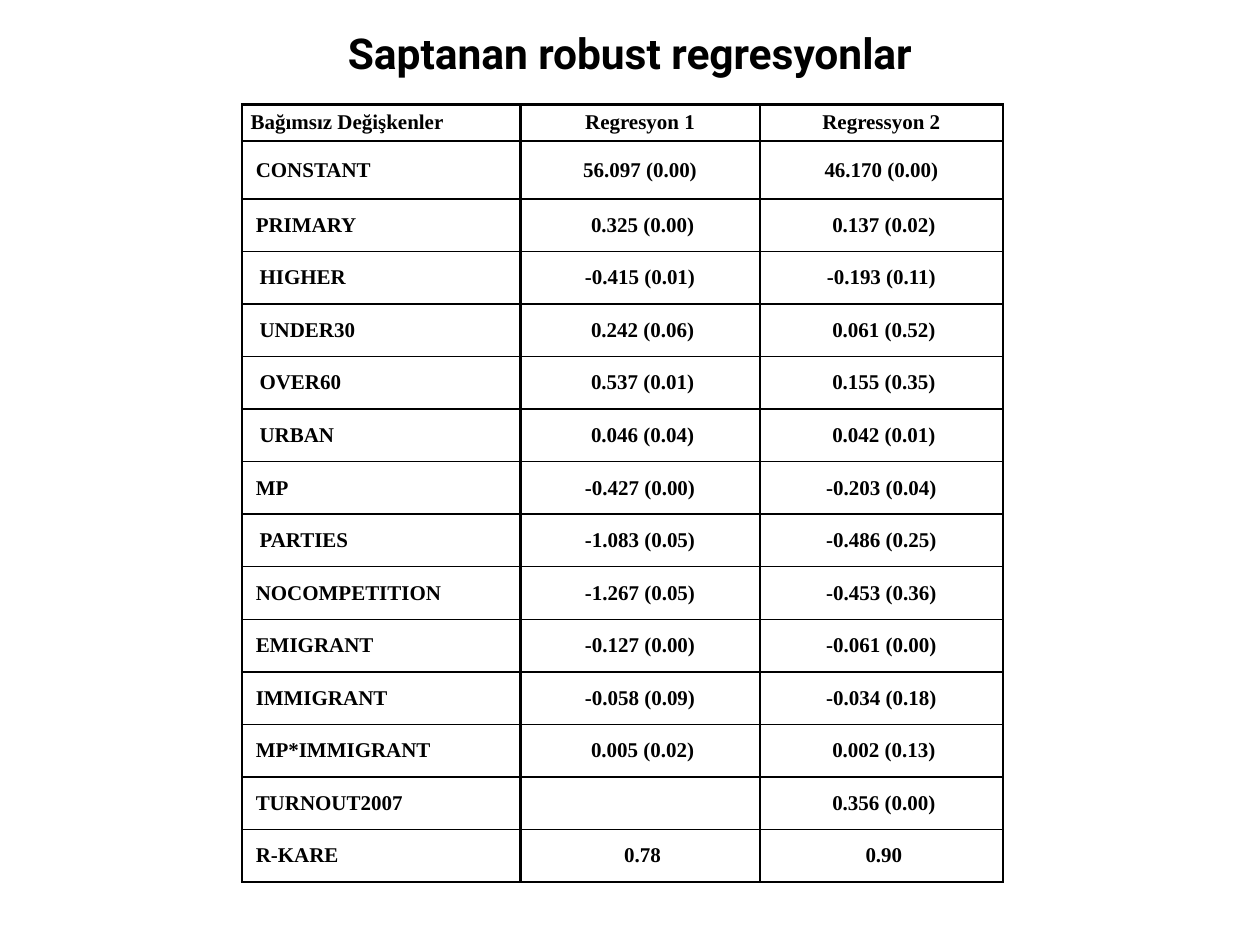
from dataclasses import dataclass

from lxml.etree import SubElement
from pptx import Presentation
from pptx.dml.color import RGBColor
from pptx.enum.text import MSO_ANCHOR as Anchor, PP_ALIGN as Align
from pptx.oxml.ns import qn
from pptx.util import Inches, Pt


@dataclass(frozen=True)
class Theme:
    ink: str = "000000"
    paper: str = "FFFFFF"
    title_font: str = "Roboto"
    table_font: str = "Times New Roman"
    title_size: float = 24.3
    table_size: float = 12
    thick_line: float = 1.5
    thin_line: float = 1


EM_SPACE = " "
CELL_MARGIN = 0.07
VALUE_INDENT = 0.04
COLUMN_WIDTHS = [2.21, 1.9, 1.93]
ROW_HEIGHTS = [0.29, 0.46] + [0.417] * 13
HEADER = ["Bağımsız Değişkenler", "Regresyon 1", "Regressyon 2"]

# Label, label indent, then (coefficient, p-value) for each regression
REGRESSION_ROWS = [
    ("CONSTANT", 0.04, ("56.097", "(0.00)"), ("46.170", "(0.00)")),
    ("PRIMARY", 0.04, ("0.325", "(0.00)"), ("0.137", "(0.02)")),
    ("HIGHER", 0.07, ("-0.415", "(0.01)"), ("-0.193", "(0.11)")),
    ("UNDER30", 0.07, ("0.242", "(0.06)"), ("0.061", "(0.52)")),
    ("OVER60", 0.07, ("0.537", "(0.01)"), ("0.155", "(0.35)")),
    ("URBAN", 0.07, ("0.046", "(0.04)"), ("0.042", "(0.01)")),
    ("MP", 0.04, ("-0.427", "(0.00)"), ("-0.203", "(0.04)")),
    ("PARTIES", 0.07, ("-1.083", "(0.05)"), ("-0.486", "(0.25)")),
    ("NOCOMPETITION", 0.04, ("-1.267", "(0.05)"), ("-0.453", "(0.36)")),
    ("EMIGRANT", 0.04, ("-0.127", "(0.00)"), ("-0.061", "(0.00)")),
    ("IMMIGRANT", 0.04, ("-0.058", "(0.09)"), ("-0.034", "(0.18)")),
    ("MP*IMMIGRANT", 0.04, ("0.005", "(0.02)"), ("0.002", "(0.13)")),
    ("TURNOUT2007", 0.04, (), ("0.356", "(0.00)")),
    ("R-KARE", 0.04, ("0.78",), ("0.90",)),
]


def write_text(frame, text, *, font, size, color, align=Align.LEFT, bold=True):
    paragraph = frame.paragraphs[0]
    paragraph.alignment = align
    paragraph.font.size = Pt(size)
    run = paragraph.add_run()
    run.text = text
    run.font.name = font
    run.font.size = Pt(size)
    run.font.bold = bold
    run.font.color.rgb = RGBColor.from_string(color)


def set_borders(cell, color, widths):
    """Draw the cell's edges; widths maps L, R, T and B, in that order, to points."""
    properties = cell._tc.get_or_add_tcPr()
    for side, width in widths.items():
        line = SubElement(properties, qn(f"a:ln{side}"), w=str(Pt(width)))
        fill = SubElement(line, qn("a:solidFill"))
        SubElement(fill, qn("a:srgbClr"), val=color)


class SlideBuilder:
    def __init__(self, slide, theme):
        self.slide = slide
        self.theme = theme

    def add_title(self, text, left, top, width, height):
        box = self.slide.shapes.add_textbox(
            Inches(left), Inches(top), Inches(width), Inches(height))
        frame = box.text_frame
        frame.word_wrap = True
        frame.vertical_anchor = Anchor.MIDDLE
        write_text(frame, text, font=self.theme.title_font,
                   size=self.theme.title_size, color=self.theme.ink,
                   align=Align.CENTER)

    def add_regression_table(self, left, top):
        table = self.slide.shapes.add_table(
            len(ROW_HEIGHTS), len(COLUMN_WIDTHS), Inches(left), Inches(top),
            Inches(sum(COLUMN_WIDTHS)), Inches(sum(ROW_HEIGHTS))).table
        table.first_row = table.horz_banding = False
        for column, width in zip(table.columns, COLUMN_WIDTHS):
            column.width = Inches(width)
        for row, height in zip(table.rows, ROW_HEIGHTS):
            row.height = Inches(height)

        thick, thin = self.theme.thick_line, self.theme.thin_line
        for column, heading in enumerate(HEADER):
            self.fill_cell(table.cell(0, column), heading, column,
                           top=thick, bottom=thick)
        for row, (label, indent, *results) in enumerate(REGRESSION_ROWS, 1):
            edges = {"top": thick if row == 1 else thin,
                     "bottom": thick if row == len(REGRESSION_ROWS) else thin}
            self.fill_cell(table.cell(row, 0), label, 0, indent=indent, **edges)
            for column, result in enumerate(results, 1):
                text = EM_SPACE.join(result)
                indent = VALUE_INDENT if text.startswith("0") else 0
                self.fill_cell(table.cell(row, column), text, column,
                               indent=indent, **edges)

    def fill_cell(self, cell, text, column, *, top, bottom, indent=0):
        theme = self.theme
        cell.margin_left = Inches(CELL_MARGIN + indent)
        cell.margin_right = Inches(CELL_MARGIN)
        cell.margin_top = cell.margin_bottom = 0
        cell.vertical_anchor = Anchor.MIDDLE
        set_borders(cell, theme.ink, {"L": theme.thick_line, "R": theme.thick_line,
                                      "T": top, "B": bottom})
        cell.fill.solid()
        cell.fill.fore_color.rgb = RGBColor.from_string(theme.paper)
        if text:
            write_text(cell.text_frame, text, font=theme.table_font,
                       size=theme.table_size, color=theme.ink,
                       align=Align.CENTER if column else Align.LEFT)


def main():
    presentation = Presentation()
    presentation.slide_width = Inches(10)
    presentation.slide_height = Inches(7.5)
    slide = presentation.slides.add_slide(presentation.slide_layouts[6])
    builder = SlideBuilder(slide, Theme())
    builder.add_title("Saptanan robust regresyonlar", 0.5, 0.17, 9, 0.5)
    builder.add_regression_table(1.92, 0.83)
    presentation.save("out.pptx")


if __name__ == "__main__":
    main()
